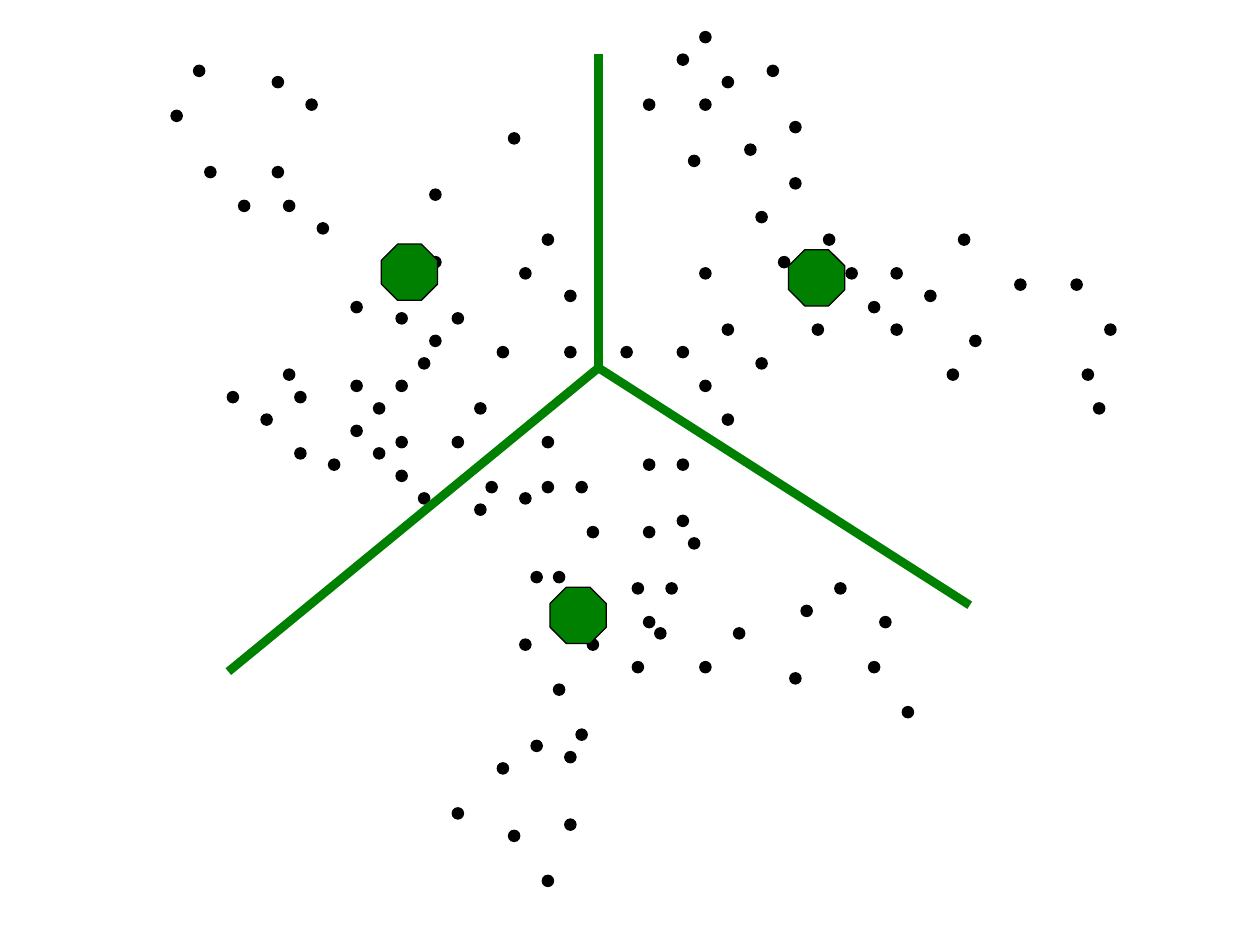
"""Build a slide of scattered points split into three clusters with octagonal centroids."""
from pptx import Presentation
from pptx.dml.color import RGBColor
from pptx.enum.shapes import MSO_CONNECTOR, MSO_SHAPE
from pptx.oxml.ns import qn
from pptx.util import Inches, Pt

OVAL, OCTAGON = MSO_SHAPE.OVAL, MSO_SHAPE.OCTAGON
STRAIGHT = MSO_CONNECTOR.STRAIGHT
PX = Inches(1) // 112
THEME = {
    "point": RGBColor(0, 0, 0),
    "cluster": RGBColor(0, 128, 0),
    "outline": RGBColor(0, 0, 0),
    "outline_width": Pt(0.75),
    "boundary_width": Pt(5),
}

PITCH, POINT_SIZE, CENTROID_SIZE = 10, 10, 50
GRID_LEFT, GRID_TOP = 152, 28
POINT_COLUMNS_BY_ROW = {
    0: [47], 2: [45], 3: [2, 53], 4: [9, 49], 6: [12, 42, 47], 7: [0],
    8: [55], 9: [30], 10: [51], 11: [46], 12: [3, 9], 13: [55],
    14: [23], 15: [6, 10], 16: [52], 17: [13], 18: [33, 58, 70],
    20: [23, 54], 21: [31, 47, 60, 64], 22: [75, 80], 23: [35, 67],
    24: [16, 62], 25: [20, 25], 26: [49, 57, 64, 83], 27: [23, 71],
    28: [29, 35, 40, 45], 29: [22, 52], 30: [10, 69, 81],
    31: [16, 20, 47], 32: [5, 11], 33: [18, 27, 82], 34: [8, 49],
    35: [16], 36: [20, 25, 33], 37: [11, 18], 38: [14, 42, 45],
    39: [20], 40: [28, 33, 36], 41: [22, 31], 42: [27], 43: [45],
    44: [37, 42], 45: [46], 48: [32, 34], 49: [41, 44, 59],
    51: [35, 56], 52: [42, 63], 53: [43, 50], 54: [31, 37],
    56: [41, 47, 62], 57: [55], 58: [34], 60: [65], 62: [36],
    63: [32], 64: [35], 65: [29], 69: [25], 70: [35], 71: [30], 75: [33],
}
JUNCTION = (532, 327)
BOUNDARY_ENDS = [(203, 597), (532, 48), (862, 538)]
CENTROIDS = [(489, 522), (701, 222), (339, 217)]


def add_marker(shapes, kind, left, top, size, color):
    marker = shapes.add_shape(kind, left * PX, top * PX, size * PX, size * PX)
    marker.shadow.inherit = False
    marker.fill.solid()
    marker.fill.fore_color.rgb = color
    marker.line.color.rgb = THEME["outline"]
    marker.line.width = THEME["outline_width"]
    return marker


prs = Presentation()
prs.slide_width, prs.slide_height = 1120 * PX, 840 * PX
slide = prs.slides.add_slide(prs.slide_layouts[6])

points = slide.shapes.add_group_shape().shapes
for row, columns in POINT_COLUMNS_BY_ROW.items():
    for column in columns:
        add_marker(points, OVAL, GRID_LEFT + column * PITCH, GRID_TOP + row * PITCH,
                   POINT_SIZE, THEME["point"])

boundaries = slide.shapes.add_group_shape().shapes
for end in BOUNDARY_ENDS:
    boundary = boundaries.add_connector(STRAIGHT, *(v * PX for v in JUNCTION + end))
    boundary.line.color.rgb = THEME["cluster"]
    boundary.line.width = THEME["boundary_width"]
    properties = boundary.line._get_or_add_ln().getparent()
    properties.append(properties.makeelement(qn("a:effectLst"), {}))

for left, top in CENTROIDS:
    centroid = add_marker(slide.shapes, OCTAGON, left, top, CENTROID_SIZE, THEME["cluster"])
    centroid.adjustments[0] = 0.29

prs.save("out.pptx")
